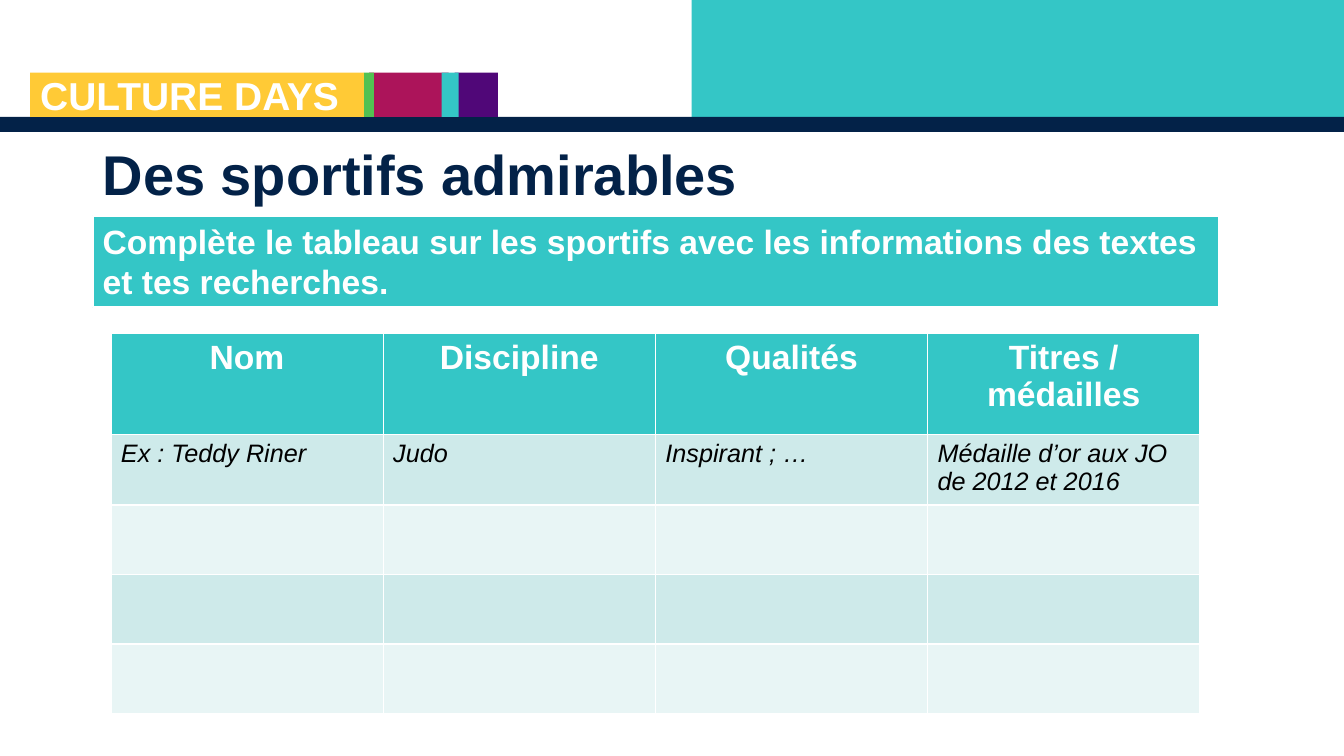
import pptx
import pptx.util
import pptx.dml.color
import pptx.enum.shapes
import pptx.enum.text
from pptx.util import Inches

THEME = {
    "font": "Arial",
    "teal": "34C6C6", "navy": "032248", "purple": "500778",
    "crimson": "AC145A", "green": "52C152", "yellow": "FFCA36",
    "white": "FFFFFF", "black": "000000",
    "bands": ("CEEAEA", "E8F5F5"),
    "brand_size": 27.8, "title_size": 40, "head_size": 24, "body_size": 18,
}

BRAND = "CULTURE DAYS"
TITLE = "Des sportifs admirables"
TASK = "Complète le tableau sur les sportifs avec les informations des textes et tes recherches."
HEADER = ["Nom", "Discipline", "Qualités", "Titres /\vmédailles"]
ROWS = [
    ["Ex : Teddy Riner", "Judo", "Inspirant ; …", "Médaille d’or aux JO de 2012 et 2016"],
    [""] * 4,
    [""] * 4,
    [""] * 4,
]

STRIP_TOP, STRIP_H = 0.72, 0.44
BANDS = [
    ("teal", 6.86, 0, 6.48, 1.16),
    ("navy", 0, 1.16, 13.33, 0.15),
]
STRIP = [
    ("purple", 4.51, 0.43),
    ("crimson", 3.66, 0.79),
    ("teal", 4.38, 0.17),
    ("green", 3.61, 0.1),
    ("yellow", 0.3, 3.31),
]
COL_W, HEAD_H, ROW_H = 2.7, 1, 0.69


def rgb(name):
    return pptx.dml.color.RGBColor.from_string(THEME.get(name, name))


def add_rect(s, color, *box):
    sp = s.shapes.add_shape(pptx.enum.shapes.MSO_SHAPE.RECTANGLE, *map(Inches, box))
    sp.shadow.inherit = False
    sp.fill.solid()
    sp.fill.fore_color.rgb = rgb(color)
    sp.line.fill.background()
    return sp


def write(tf, text, size, color, bold=True, italic=False, align="LEFT", spacing=None):
    tf.word_wrap = True
    p = tf.paragraphs[0]
    p.text = text
    p.alignment = getattr(pptx.enum.text.PP_ALIGN, align)
    p.line_spacing = spacing
    for font in [p.font] + [r.font for r in p.runs]:
        font.name = THEME["font"]
        font.size = pptx.util.Pt(THEME[size])
        font.bold = bold
        font.italic = italic
        font.color.rgb = rgb(color)


def add_text(s, box, text, size, color, spacing, anchor="TOP"):
    tf = s.shapes.add_textbox(*map(Inches, box)).text_frame
    tf.vertical_anchor = getattr(pptx.enum.text.MSO_ANCHOR, anchor)
    write(tf, text, size, color, spacing=spacing)


def add_athletes(s):
    cols, count = len(HEADER), len(ROWS) + 1
    table = s.shapes.add_table(
        count, cols, Inches(1.1), Inches(3.31),
        Inches(COL_W * cols), Inches(HEAD_H + ROW_H * len(ROWS))).table
    for col in table.columns:
        col.width = Inches(COL_W)
    for i, texts in enumerate([HEADER] + ROWS):
        head = i == 0
        table.rows[i].height = Inches(HEAD_H if head else ROW_H)
        for j, text in enumerate(texts):
            cell = table.cell(i, j)
            cell.fill.solid()
            cell.fill.fore_color.rgb = rgb("teal" if head else THEME["bands"][(i - 1) % 2])
            if head:
                write(cell.text_frame, text, "head_size", "white", align="CENTER")
            else:
                write(cell.text_frame, text, "body_size", "black", bold=False, italic=True)


def main():
    prs = pptx.Presentation()
    prs.slide_width, prs.slide_height = Inches(13.33), Inches(7.5)
    s = prs.slides.add_slide(prs.slide_layouts[6])
    for color, *box in BANDS:
        add_rect(s, color, *box)
    for color, left, width in STRIP:
        add_rect(s, color, left, STRIP_TOP, width, STRIP_H)
    add_text(s, (0.3, 0.75, 4.15, 0.48), BRAND, "brand_size", "white", 0.8)
    add_text(s, (0.92, 1.03, 11.5, 1.45), TITLE, "title_size", "navy", 0.9, "MIDDLE")
    task = add_rect(s, "teal", 0.92, 2.14, 11.17, 0.91)
    task.line.color.rgb = rgb("white")
    task.line.width = pptx.util.Pt(1.5)
    task.text_frame.vertical_anchor = pptx.enum.text.MSO_ANCHOR.TOP
    write(task.text_frame, TASK, "head_size", "white")
    add_athletes(s)
    prs.save("out.pptx")


if __name__ == "__main__":
    main()
